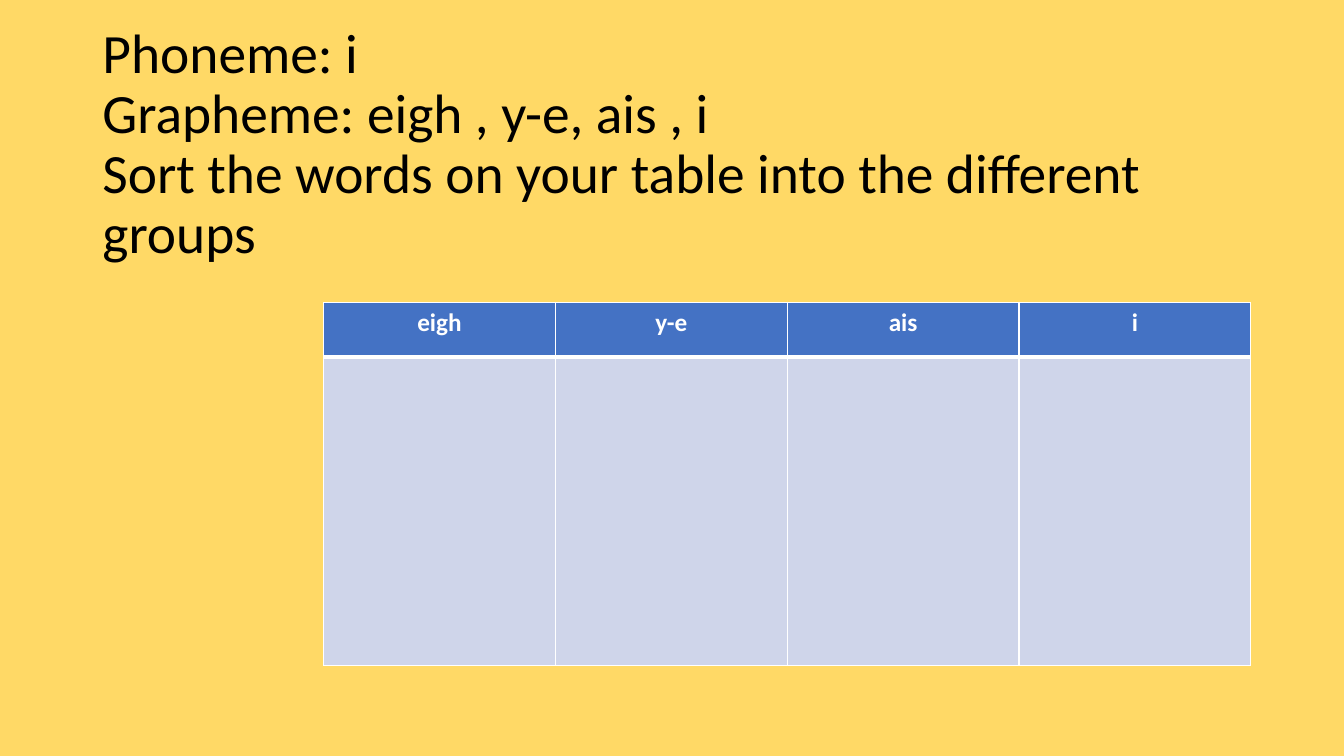
from copy import deepcopy

from lxml.etree import SubElement
from pptx import Presentation
from pptx.dml.color import RGBColor
from pptx.enum.text import MSO_ANCHOR, MSO_AUTO_SIZE, PP_ALIGN
from pptx.oxml.ns import qn
from pptx.util import Pt

TITLE = (
    "Phoneme: i\n"
    "Grapheme: eigh , y-e, ais , i\n"
    "Sort the words on your table into the different groups"
)
GRAPHEMES = ["eigh", "y-e", "ais", "i"]
COLOURS = {
    "background": "FFD966",
    "title": "000000",
    "header": "4472C4",
    "body": "CFD5EA",
    "white": "FFFFFF",
}
FONT = "Calibri"
TABLE_LEFT, TABLE_TOP, COLUMN_WIDTH = 231.1, 216, 165.6
ROW_HEIGHTS = [38.9, 220.7]


def colour(name):
    return RGBColor.from_string(COLOURS[name])


def format_span(span, size, colour_name, bold=False):
    span.font.name = FONT
    span.font.size = Pt(size)
    span.font.bold = bold
    span.font.color.rgb = colour(colour_name)


def add_borders(cell, top, bottom):
    properties = cell._tc.get_or_add_tcPr()
    for side, width in {"L": 1, "R": 1, "T": top, "B": bottom}.items():
        line = SubElement(properties, qn(f"a:ln{side}"), w=str(Pt(width)))
        fill = SubElement(line, qn("a:solidFill"))
        SubElement(fill, qn("a:srgbClr"), val=COLOURS["white"])


def add_title(page):
    box = page.shapes.title
    box.left, box.top, box.width, box.height = Pt(66), Pt(51.75), Pt(828), Pt(104.4)
    frame = box.text_frame
    frame.word_wrap = True
    frame.auto_size = MSO_AUTO_SIZE.NONE
    frame.vertical_anchor = MSO_ANCHOR.MIDDLE
    para = frame.paragraphs[0]
    para.text = TITLE
    para.alignment = PP_ALIGN.LEFT
    para.line_spacing = 0.9
    para.space_before = Pt(0)
    for span in para.runs:
        format_span(span, 39.6, "title")
    for line_break in para._p.findall(qn("a:br")):
        line_break.append(deepcopy(para.runs[0].font._element))


def add_sorting_table(page, index, grapheme):
    left = TABLE_LEFT + index * COLUMN_WIDTH
    table = page.shapes.add_table(
        2, 1, Pt(left), Pt(TABLE_TOP), Pt(COLUMN_WIDTH), Pt(sum(ROW_HEIGHTS))
    ).table
    for row, height in zip(table.rows, ROW_HEIGHTS):
        row.height = Pt(height)
    header, body = table.cell(0, 0), table.cell(1, 0)
    add_borders(header, 1, 3)
    add_borders(body, 3, 1)
    for cell, name in ((header, "header"), (body, "body")):
        cell.fill.solid()
        cell.fill.fore_color.rgb = colour(name)
    para = header.text_frame.paragraphs[0]
    para.text = grapheme
    para.alignment = PP_ALIGN.CENTER
    format_span(para.runs[0], 18, "white", bold=True)


def main():
    deck = Presentation()
    deck.slide_width, deck.slide_height = Pt(960), Pt(540)
    page = deck.slides.add_slide(deck.slide_layouts[5])
    page.background.fill.solid()
    page.background.fill.fore_color.rgb = colour("background")
    add_title(page)
    for index, grapheme in enumerate(GRAPHEMES):
        add_sorting_table(page, index, grapheme)
    deck.save("out.pptx")


if __name__ == "__main__":
    main()
